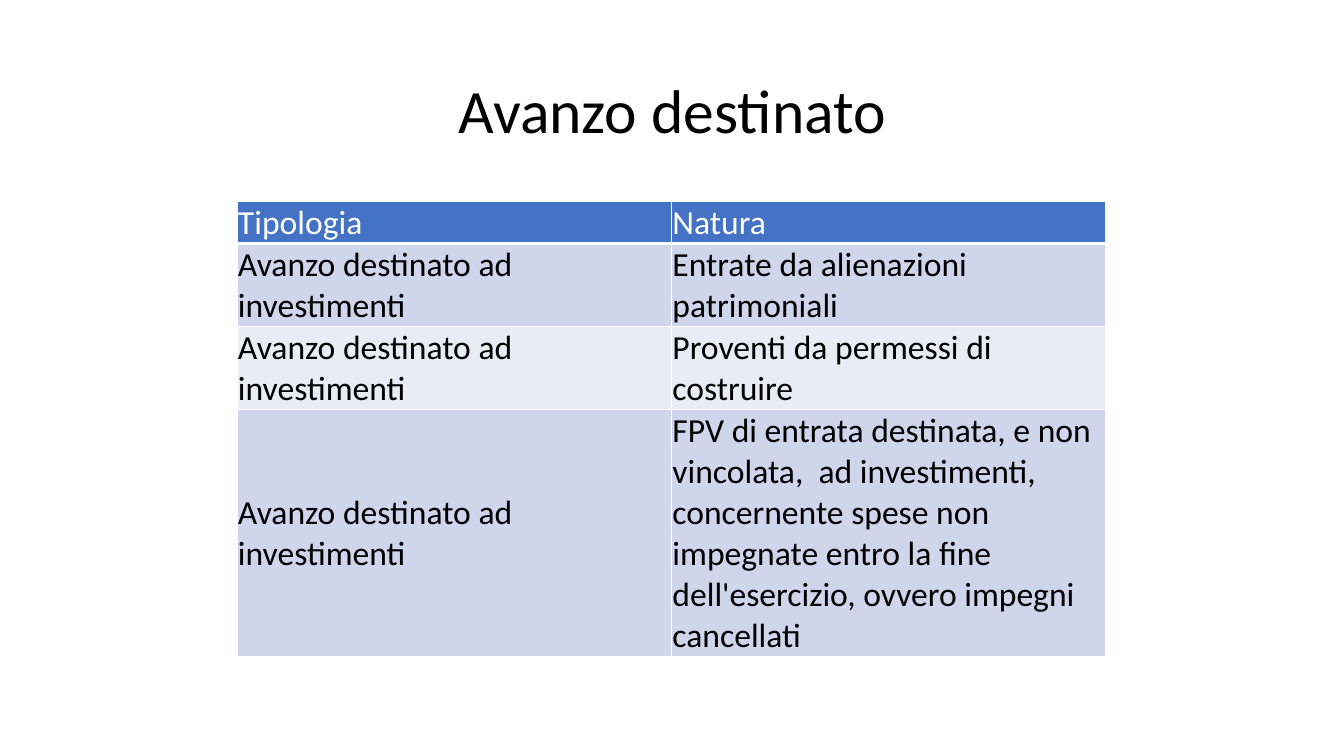
from lxml.etree import SubElement
from pptx import Presentation
from pptx.dml.color import RGBColor
from pptx.enum.text import MSO_ANCHOR, PP_ALIGN
from pptx.oxml.ns import qn
from pptx.util import Inches, Pt

BLACK = RGBColor(0x00, 0x00, 0x00)
WHITE = RGBColor(0xFF, 0xFF, 0xFF)
HEADER_BLUE = RGBColor(0x44, 0x72, 0xC4)
BAND_DARK = RGBColor(0xCF, 0xD5, 0xEA)
BAND_LIGHT = RGBColor(0xE9, 0xEB, 0xF5)

ROWS = [
    ("Tipologia", "Natura"),
    ("Avanzo destinato ad investimenti", "Entrate da alienazioni patrimoniali"),
    ("Avanzo destinato ad investimenti", "Proventi da permessi di costruire"),
    ("Avanzo destinato ad investimenti",
     "FPV di entrata destinata, e non vincolata,  ad investimenti, concernente "
     "spese non impegnate entro la fine  dell'esercizio, ovvero impegni cancellati"),
]


def write(tf, text, size, color):
    p = tf.paragraphs[0]
    r = p.add_run()
    r.text = text
    r.font.name = "Calibri"
    r.font.size = Pt(size)
    r.font.color.rgb = color
    return p


def add_border(cell, side, width):
    ln = SubElement(cell._tc.get_or_add_tcPr(), qn("a:ln" + side), w=str(Pt(width)))
    fill = SubElement(ln, qn("a:solidFill"))
    SubElement(fill, qn("a:srgbClr"), val=str(WHITE))


prs = Presentation()
prs.slide_width, prs.slide_height = Inches(13.33), Inches(7.5)
s = prs.slides.add_slide(prs.slide_layouts[5])

# Title
title = s.shapes.title
title.left, title.top = Inches(0.92), Inches(0.4)
title.width, title.height = Inches(11.5), Inches(1.45)
title.text_frame.vertical_anchor = MSO_ANCHOR.MIDDLE
p = write(title.text_frame, "Avanzo destinato", 44, BLACK)
p.alignment = PP_ALIGN.CENTER
p.line_spacing = 0.9

# Table: rows grow with their text
table = s.shapes.add_table(len(ROWS), 2, Inches(2.35), Inches(2),
                           Inches(8.62), Inches(0.41 * len(ROWS))).table
cell_format = {"margin_left": Inches(0.01), "margin_right": Inches(0.01),
               "margin_top": Inches(0.01), "margin_bottom": 0}
for i, row in enumerate(ROWS):
    header = i == 0
    fill = HEADER_BLUE if header else BAND_DARK if i % 2 else BAND_LIGHT
    for j, text in enumerate(row):
        cell = table.cell(i, j)
        for name, value in cell_format.items():
            setattr(cell, name, value)
        bottom = j == 1 and not header
        cell.vertical_anchor = MSO_ANCHOR.BOTTOM if bottom else MSO_ANCHOR.MIDDLE
        for side in "LRTB":
            add_border(cell, side, 3 if header and side == "B" else 1)
        cell.fill.solid()
        cell.fill.fore_color.rgb = fill
        write(cell.text_frame, text, 24, WHITE if header else BLACK)

prs.save("out.pptx")
